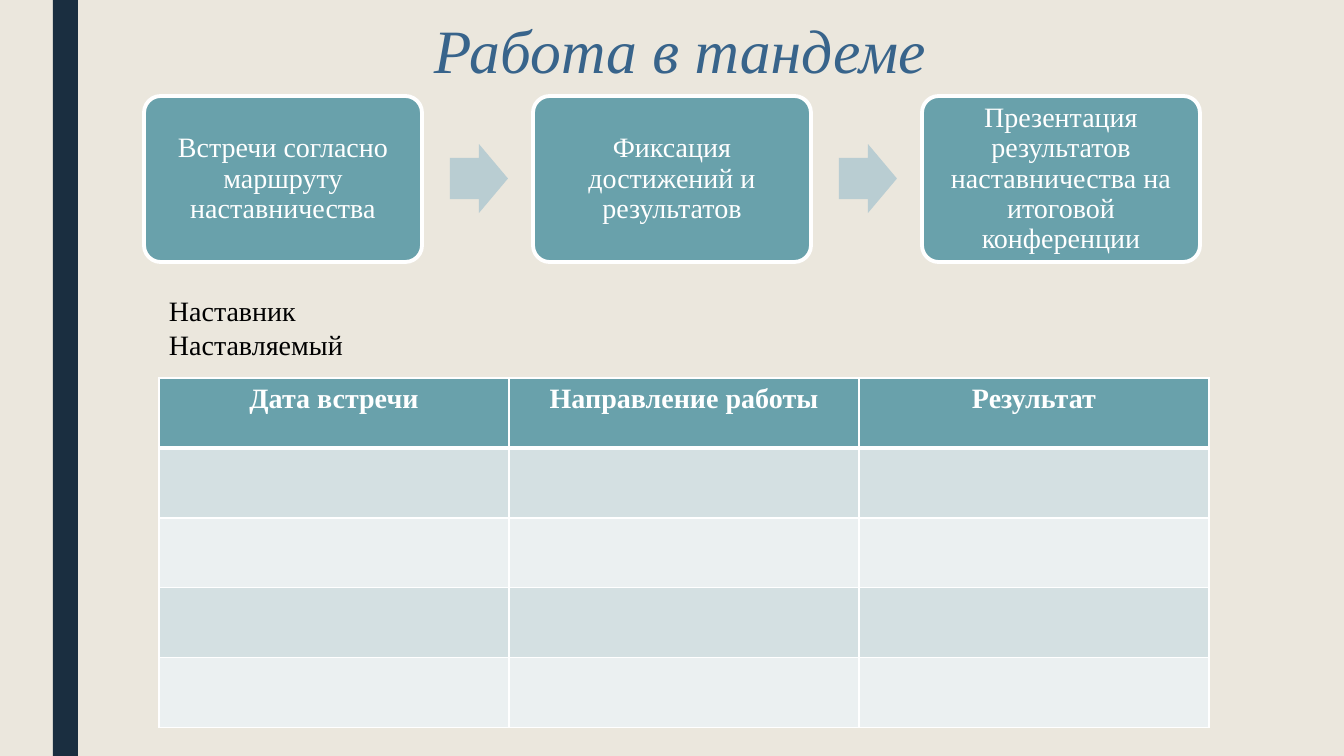
from lxml.etree import SubElement
from pptx import Presentation
from pptx.dml.color import RGBColor
from pptx.enum.shapes import MSO_SHAPE as Preset
from pptx.enum.text import MSO_ANCHOR as Anchor, PP_ALIGN as Align
from pptx.oxml.ns import qn
from pptx.util import Pt

PX = 914400 / 100.8
FONT = "Times New Roman"
SAND = RGBColor(0xEB, 0xE7, 0xDD)
NAVY = RGBColor(0x1A, 0x2E, 0x40)
BLUE = RGBColor(0x38, 0x64, 0x8B)
TEAL = RGBColor(0x69, 0xA1, 0xAB)
PALE_TEAL = RGBColor(0xB9, 0xCD, 0xD2)
BAND_DARK = RGBColor(0xD4, 0xE0, 0xE2)
BAND_LIGHT = RGBColor(0xEB, 0xF0, 0xF1)
WHITE = RGBColor(0xFF, 0xFF, 0xFF)
BLACK = RGBColor(0, 0, 0)

STEPS = [
    "Встречи согласно маршруту наставничества",
    "Фиксация достижений и результатов",
    "Презентация результатов наставничества на итоговой конференции",
]
HEADINGS = ["Дата встречи", "Направление работы", "Результат"]
BODY_ROWS = 4
STEP_LEFT, STEP_PITCH = 144, 389
ARROW_LEFT = 450
COLUMN, ROW = 350, 70


def px(*lengths):
    return [round(length * PX) for length in lengths]


def apply(target, values):
    for name, value in values.items():
        setattr(target, name, value)


def write(paragraph, text, color, size=20, spacing=1.0, align=Align.CENTER, **style):
    apply(paragraph, {"alignment": align, "line_spacing": spacing})
    run = paragraph.add_run()
    run.text = text
    apply(run.font, {"name": FONT, "size": Pt(size), **style})
    run.font.color.rgb = color


def add_block(slide, preset, box, fill, adjustments=()):
    block = slide.shapes.add_shape(preset, *px(*box))
    block.shadow.inherit = False
    block.fill.solid()
    block.fill.fore_color.rgb = fill
    block.line.fill.background()
    for index, value in enumerate(adjustments):
        block.adjustments[index] = value
    return block


def add_step(slide, left, text):
    step = add_block(slide, Preset.ROUNDED_RECTANGLE, (left, 96, 278, 166), TEAL, [0.1])
    step.line.color.rgb = WHITE
    step.line.width = Pt(2.75)
    inset = px(8)[0]
    apply(step.text_frame, {
        "word_wrap": True, "vertical_anchor": Anchor.MIDDLE,
        "margin_left": inset, "margin_right": inset,
        "margin_top": inset, "margin_bottom": inset,
    })
    write(step.text_frame.paragraphs[0], text, WHITE, spacing=0.9)


def add_text(slide, box):
    frame = slide.shapes.add_textbox(*px(*box)).text_frame
    apply(frame, {"word_wrap": True, "vertical_anchor": Anchor.TOP})
    return frame


def set_borders(cell, widths):
    properties = cell._tc.get_or_add_tcPr()
    for side, width in widths.items():
        border = SubElement(properties, qn(f"a:ln{side}"), w=str(Pt(width)))
        fill = SubElement(border, qn("a:solidFill"))
        SubElement(fill, qn("a:srgbClr"), val=str(WHITE))


def add_meeting_table(slide):
    row_count, column_count = BODY_ROWS + 1, len(HEADINGS)
    box = px(159, 378, COLUMN * column_count, ROW * row_count)
    meetings = slide.shapes.add_table(row_count, column_count, *box).table
    for column in meetings.columns:
        column.width = px(COLUMN)[0]
    for index, row in enumerate(meetings.rows):
        row.height = px(ROW)[0]
        band = BAND_DARK if index % 2 else BAND_LIGHT
        for cell in row.cells:
            set_borders(cell, {
                "L": 1, "R": 1,
                "T": 3 if index == 1 else 1,
                "B": 3 if index == 0 else 1,
            })
            cell.fill.solid()
            cell.fill.fore_color.rgb = band if index else TEAL
    for cell, heading in zip(meetings.rows[0].cells, HEADINGS):
        write(cell.text_frame.paragraphs[0], heading, WHITE, bold=True)


def main():
    deck = Presentation()
    deck.slide_width, deck.slide_height = px(1344, 756)
    slide = deck.slides.add_slide(deck.slide_layouts[6])
    slide.background.fill.solid()
    slide.background.fill.fore_color.rgb = SAND

    add_block(slide, Preset.RECTANGLE, (53, 0, 25, 756), NAVY)
    title = add_text(slide, (151, 16, 1058, 137))
    write(title.paragraphs[0], "Работа в тандеме", BLUE, 44, 0.89, italic=True)

    for index, text in enumerate(STEPS):
        offset = index * STEP_PITCH
        add_step(slide, STEP_LEFT + offset, text)
        if index < len(STEPS) - 1:
            arrow_box = (ARROW_LEFT + offset, 144, 58, 69)
            add_block(slide, Preset.RIGHT_ARROW, arrow_box, PALE_TEAL, [0.6, 0.5])

    add_meeting_table(slide)
    roles = add_text(slide, (159, 272, 1041, 95))
    write(roles.paragraphs[0], "Наставник", BLACK, spacing=1.5, align=Align.LEFT)
    write(roles.add_paragraph(), "Наставляемый", BLACK, align=Align.LEFT)

    deck.save("out.pptx")


if __name__ == "__main__":
    main()
